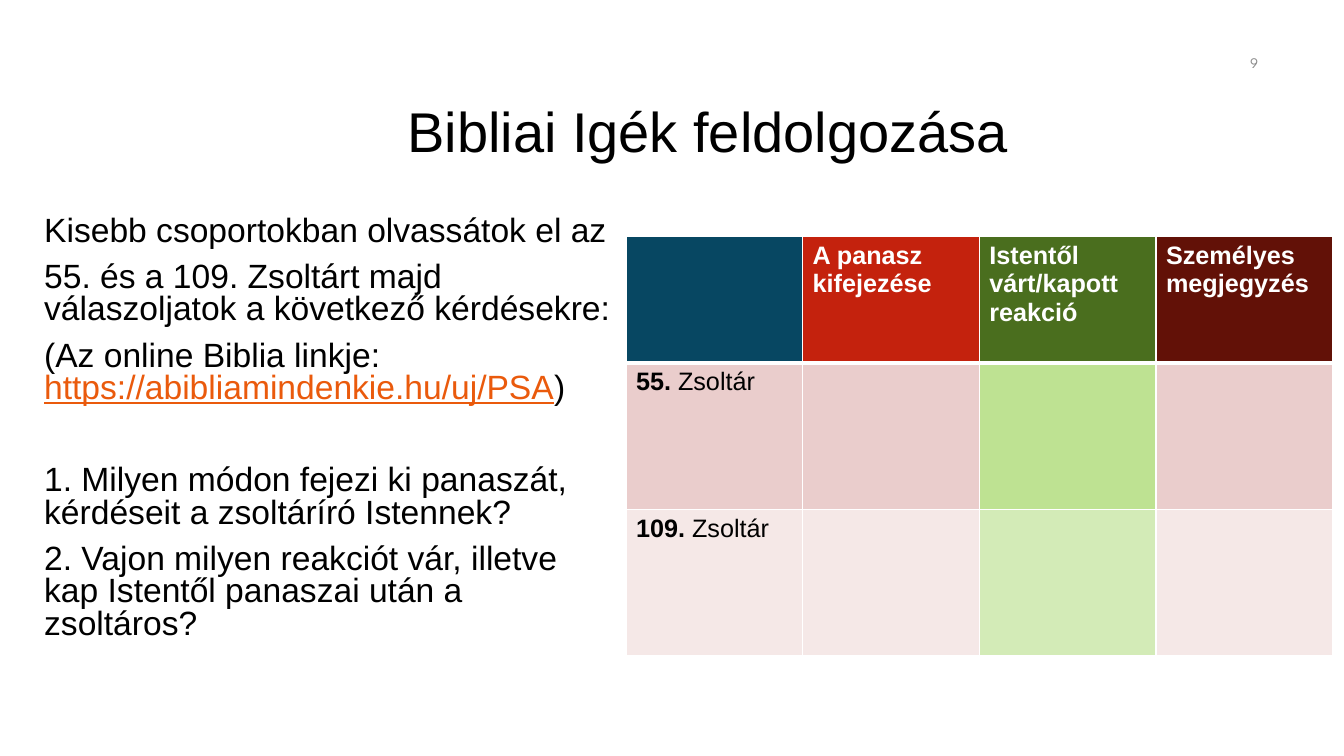
from lxml.etree import SubElement
from pptx import Presentation
from pptx.dml.color import RGBColor
from pptx.enum.text import MSO_ANCHOR, PP_ALIGN
from pptx.oxml.ns import qn
from pptx.util import Pt


def color(value):
    return RGBColor.from_string(value)


def add_span(para, text, size, shade, bold=False, font="Arial"):
    span = para.add_run()
    span.text = text
    span.font.name = font
    span.font.size = Pt(size)
    span.font.bold = bold
    span.font.color.rgb = color(shade)
    return span


deck = Presentation()
deck.slide_width = Pt(960)
deck.slide_height = Pt(540)
page = deck.slides.add_slide(deck.slide_layouts[6])

title_box = page.shapes.add_textbox(Pt(221.8), Pt(66.2), Pt(516.2), Pt(59))
title_box.text_frame.word_wrap = True
title_box.text_frame.vertical_anchor = MSO_ANCHOR.MIDDLE
title_box.text_frame.margin_right = Pt(18.3)
title = title_box.text_frame.paragraphs[0]
title.alignment = PP_ALIGN.RIGHT
title.line_spacing = 0.9
add_span(title, "Bibliai Igék feldolgozása", 40, "000000")

number_box = page.shapes.add_textbox(Pt(689.8), Pt(30.2), Pt(216), Pt(28.8))
number_box.text_frame.word_wrap = True
number_box.text_frame.vertical_anchor = MSO_ANCHOR.MIDDLE
number = number_box.text_frame.paragraphs[0]
number.alignment = PP_ALIGN.RIGHT
add_span(number, "9", 10.5, "8C8C8C", font="League Spartan")

link = "https://abibliamindenkie.hu/uj/PSA"
tasks = [
    (0, ["Kisebb csoportokban olvassátok el az"]),
    (10, ["55. és a 109. Zsoltárt majd válaszoljatok a következő kérdésekre:"]),
    (10, ["(Az online Biblia linkje: ", link, ")"]),
    (43, ["1. Milyen módon fejezi ki panaszát, kérdéseit a zsoltáríró Istennek?"]),
    (10, ["2. Vajon milyen reakciót vár, illetve kap Istentől panaszai után a zsoltáros?"]),
]
task_box = page.shapes.add_textbox(Pt(24.5), Pt(151.2), Pt(422.6), Pt(335.5))
task_box.text_frame.word_wrap = True
for index, (gap, parts) in enumerate(tasks):
    frame = task_box.text_frame
    para = frame.add_paragraph() if index else frame.paragraphs[0]
    para.line_spacing = 0.8
    para.space_before = Pt(gap)
    for part in parts:
        span = add_span(para, part, 24, "EA5A0C" if part == link else "000000")
        span.font.underline = part == link

headings = ["", "A panasz kifejezése", "Istentől várt/kapott reakció", "Személyes megjegyzés"]
psalms = ["55. ", "109. "]
fills = [
    ["074762", "C4220D", "4A6E1E", "621107"],
    ["EACDCC", "EACDCC", "BEE292", "EACDCC"],
    ["F5E8E7", "F5E8E7", "D3EBB7", "F5E8E7"],
]
heights = [90, 104.7, 104.7]
table = page.shapes.add_table(3, 4, Pt(447.1), Pt(169.2), Pt(504.8), Pt(299.4)).table
for column in table.columns:
    column.width = Pt(126.2)
for row_index, height in enumerate(heights):
    table.rows[row_index].height = Pt(height)
    for column_index, fill in enumerate(fills[row_index]):
        cell = table.cell(row_index, column_index)
        para = cell.text_frame.paragraphs[0]
        if row_index == 0 and headings[column_index]:
            add_span(para, headings[column_index], 18, "FFFFFF", bold=True)
        elif row_index and column_index == 0:
            add_span(para, psalms[row_index - 1], 18, "000000", bold=True)
            add_span(para, "Zsoltár", 18, "000000")
        properties = cell._tc.get_or_add_tcPr()
        for side in ("lnL", "lnR", "lnT", "lnB"):
            thick = (row_index, side) in [(0, "lnB"), (1, "lnT")]
            line = SubElement(properties, qn(f"a:{side}"), w=str(Pt(3 if thick else 1)))
            SubElement(SubElement(line, qn("a:solidFill")), qn("a:srgbClr"), val="FFFFFF")
        cell.fill.solid()
        cell.fill.fore_color.rgb = color(fill)

deck.save("out.pptx")
